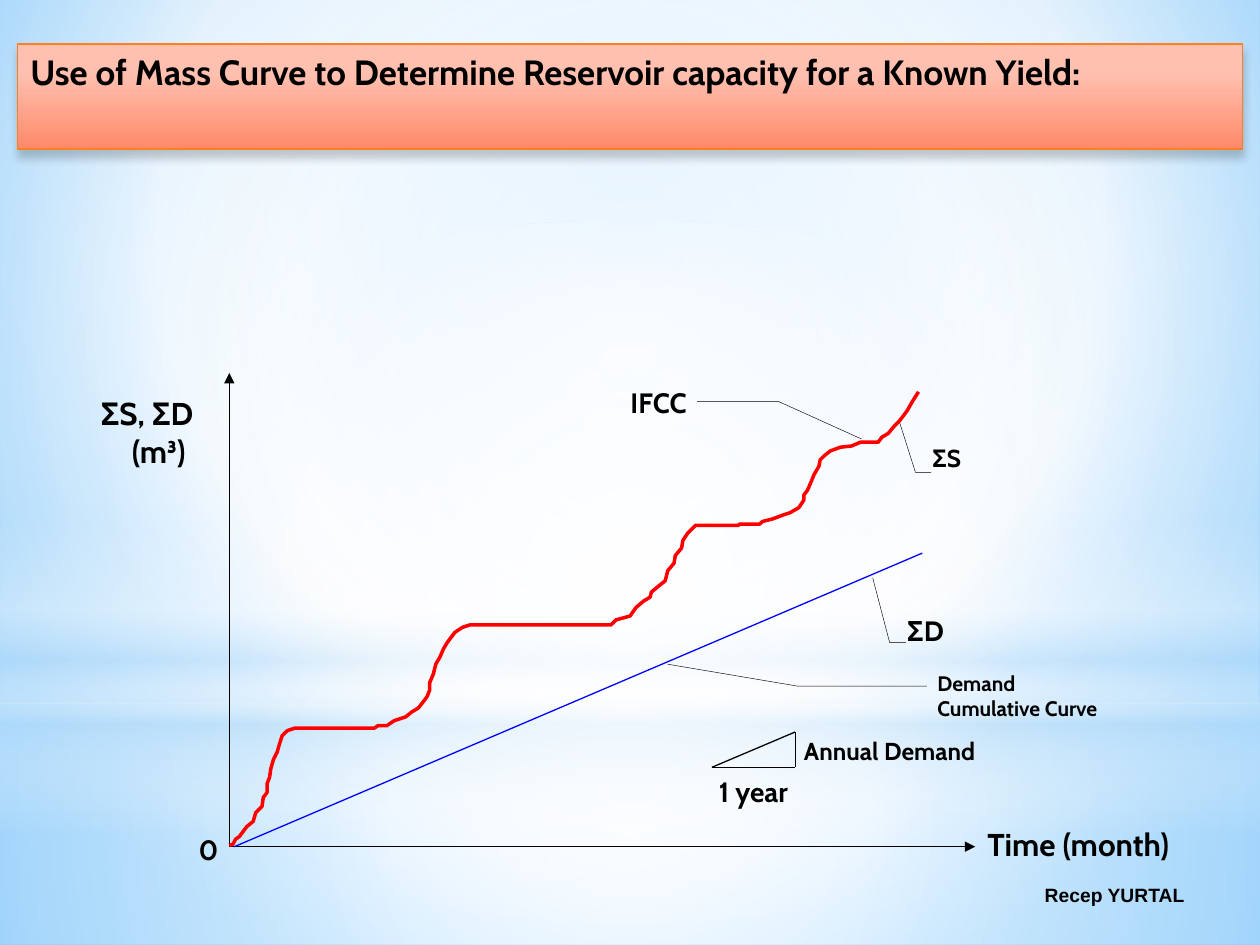
from lxml.etree import SubElement
from pptx import Presentation
from pptx.dml.color import RGBColor
from pptx.enum.shapes import MSO_CONNECTOR, MSO_SHAPE
from pptx.enum.text import MSO_ANCHOR, MSO_AUTO_SIZE, PP_ALIGN
from pptx.oxml import parse_xml
from pptx.oxml.ns import nsdecls, qn
from pptx.util import Inches, Pt

BLACK, RED, BLUE = "000000", "FF0000", "0000FF"
WHITE, SKY = "FFFFFF", "B4DCFA"
CENTRE = (50, 50, 50, 50)
ORIGIN_X, AXIS_Y = 1.82, 6.72

# Cumulative inflow curve: steep wet seasons joined by flat dry seasons
INFLOW = [
    (1.82, 6.71), (1.85, 6.7), (1.87, 6.66), (1.9, 6.64), (1.93, 6.6),
    (1.96, 6.56), (2.01, 6.52), (2.03, 6.45), (2.08, 6.4), (2.09, 6.33),
    (2.12, 6.29), (2.12, 6.22), (2.14, 6.17), (2.15, 6.1), (2.17, 6.03),
    (2.2, 5.97), (2.22, 5.9), (2.24, 5.84), (2.28, 5.8), (2.34, 5.78),
    (2.97, 5.78), (3, 5.76), (3.07, 5.76), (3.13, 5.72), (3.22, 5.69),
    (3.27, 5.65), (3.32, 5.62), (3.36, 5.57), (3.39, 5.53), (3.41, 5.48),
    (3.41, 5.42), (3.44, 5.35), (3.46, 5.27), (3.49, 5.22), (3.52, 5.15),
    (3.55, 5.1), (3.58, 5.06), (3.61, 5.02), (3.67, 4.98), (3.73, 4.96),
    (4.85, 4.96), (4.89, 4.92), (5, 4.89), (5.05, 4.82), (5.11, 4.77),
    (5.16, 4.74), (5.17, 4.7), (5.23, 4.65), (5.28, 4.61), (5.3, 4.53),
    (5.35, 4.47), (5.36, 4.41), (5.41, 4.35), (5.42, 4.29), (5.46, 4.23),
    (5.49, 4.2), (5.52, 4.17), (5.86, 4.17), (5.87, 4.16), (6.03, 4.16),
    (6.05, 4.14), (6.13, 4.12), (6.21, 4.09), (6.27, 4.07), (6.34, 4.03),
    (6.38, 3.97), (6.38, 3.93), (6.41, 3.89), (6.44, 3.82), (6.46, 3.77),
    (6.5, 3.7), (6.51, 3.65), (6.54, 3.62), (6.59, 3.58), (6.67, 3.55),
    (6.76, 3.54), (6.83, 3.51), (6.97, 3.51), (7, 3.47), (7.05, 3.44),
    (7.1, 3.38), (7.14, 3.34), (7.2, 3.26), (7.24, 3.19), (7.29, 3.11),
]


def rgb(hex_color):
    return RGBColor.from_string(hex_color)


def inches(*values):
    return [Inches(v) for v in values]


def set_gradient(fill, holder, stops, centre=None, angle=90):
    """Give a fill gradient stops of (position, colour[, opacity])."""
    fill.solid()
    grad = parse_xml(f'<a:gradFill {nsdecls("a")} rotWithShape="1"/>')
    gs_list = SubElement(grad, qn("a:gsLst"))
    for position, color, *opacity in stops:
        gs = SubElement(gs_list, qn("a:gs"), pos=str(position * 1000))
        clr = SubElement(gs, qn("a:srgbClr"), val=color)
        if opacity:
            SubElement(clr, qn("a:alpha"), val=str(opacity[0] * 1000))
    if centre:
        circle = SubElement(grad, qn("a:path"), path="circle")
        sides = {side: str(v * 1000) for side, v in zip("ltrb", centre)}
        SubElement(circle, qn("a:fillToRect"), **sides)
    else:
        SubElement(grad, qn("a:lin"), ang=str(angle * 60000), scaled="0")
    solid = holder.find(qn("a:solidFill"))
    holder.replace(solid, grad)


def add_glow(slide, kind, box, stops, centre=None):
    sp = slide.shapes.add_shape(kind, *inches(*box))
    sp.shadow.inherit = False
    sp.line.fill.background()
    set_gradient(sp.fill, sp._element.spPr, stops, centre)


def write_text(tf, text, size=16, font="Cabin", aligns=(PP_ALIGN.LEFT,), inset=None):
    """Write one paragraph per line of text, each with its own alignment."""
    tf.word_wrap = True
    if inset is not None:
        tf.margin_left = tf.margin_top = Inches(inset)
        tf.margin_right = tf.margin_bottom = Inches(inset)
    for i, (line, align) in enumerate(zip(text.split("\n"), aligns)):
        p = tf.add_paragraph() if i else tf.paragraphs[0]
        p.alignment = align
        r = p.add_run()
        r.text = line
        r.font.size, r.font.name, r.font.bold = Pt(size), font, True
        r.font.color.rgb = rgb(BLACK)


def add_label(slide, box, text, leader=None, **text_format):
    """Add a plain label, or a callout when leader adjustments are given."""
    kind = MSO_SHAPE.LINE_CALLOUT_2_NO_BORDER if leader else MSO_SHAPE.ROUNDED_RECTANGLE
    sp = slide.shapes.add_shape(kind, *inches(*box))
    sp.shadow.inherit = False
    sp.fill.background()
    if leader:
        for i, value in enumerate(leader):
            sp.adjustments[i] = value
        sp.line.color.rgb = rgb(BLACK)
        sp.line.width = Pt(0.25)
    else:
        sp.line.fill.background()
    sp.text_frame.vertical_anchor = MSO_ANCHOR.TOP
    write_text(sp.text_frame, text, **{"inset": 0.01, **text_format})


def add_line(slide, start, end, color=BLACK, width=0.25, arrow=False):
    line = slide.shapes.add_connector(MSO_CONNECTOR.STRAIGHT, *inches(*start, *end))
    line.line.color.rgb = rgb(color)
    line.line.width = Pt(width)
    if arrow:
        SubElement(line.line._get_or_add_ln(), qn("a:tailEnd"), type="triangle")
    SubElement(line._element.spPr, qn("a:effectLst"))


def add_curve(slide, points, color, width):
    start, *rest = [inches(*point) for point in points]
    builder = slide.shapes.build_freeform(*start)
    builder.add_line_segments(rest, close=False)
    sp = builder.convert_to_shape()
    sp.shadow.inherit = False
    sp.fill.background()
    sp.line.color.rgb = rgb(color)
    sp.line.width = Pt(width)


def add_background(slide):
    fill = slide.background.fill
    fill.solid()
    holder = slide._element.find(".//" + qn("p:bgPr"))
    set_gradient(fill, holder, [(0, "9ED5FF"), (60, WHITE), (100, "5BB9FF")], (20, 10, 20, 60))
    rect = MSO_SHAPE.RECTANGLE
    add_glow(slide, rect, (0, 5.58, 10, 1.92),
             [(0, WHITE, 91), (37, WHITE, 76), (100, SKY, 79)], CENTRE)
    add_glow(slide, rect, (0, 0, 10, 5.58),
             [(0, WHITE, 89), (48, WHITE, 62), (100, SKY, 79)], CENTRE)
    add_glow(slide, rect, (0, 4.12, 10, 2.5),
             [(0, WHITE, 0), (29, WHITE, 30), (45, SKY, 40),
              (55, WHITE, 26), (65, SKY, 60), (100, WHITE, 0)])
    add_glow(slide, MSO_SHAPE.OVAL, (0, 1.75, 10, 5.58),
             [(0, WHITE, 100), (56, WHITE, 0)], CENTRE)


def format_title(slide, text):
    sp = slide.shapes.title
    sp.left, sp.top, sp.width, sp.height = inches(0.14, 0.35, 9.72, 0.44)
    write_text(sp.text_frame, text, size=20)
    sp.text_frame.auto_size = MSO_AUTO_SIZE.SHAPE_TO_FIT_TEXT
    sp.text_frame.vertical_anchor = MSO_ANCHOR.TOP
    set_gradient(sp.fill, sp._element.spPr, [(28, "FFC0AF"), (100, "FF8968")])
    sp.line.color.rgb = rgb("FF8021")
    sp.line.width = Pt(0.75)
    effects = SubElement(sp._element.spPr, qn("a:effectLst"))
    shadow = SubElement(effects, qn("a:outerShdw"), blurRad=str(Pt(5)),
                        dist=str(Pt(4)), dir="5400000", rotWithShape="0")
    clr = SubElement(shadow, qn("a:srgbClr"), val=BLACK)
    SubElement(clr, qn("a:alpha"), val="20000")
    # Bring the title in front of the background shapes
    slide.shapes._spTree.append(sp._element)


def main():
    prs = Presentation()
    prs.slide_width, prs.slide_height = inches(10, 7.5)
    slide = prs.slides.add_slide(prs.slide_layouts[5])
    add_background(slide)

    # Author
    author = slide.shapes.add_textbox(*inches(6.75, 6.9, 2.75, 0.4))
    author.text_frame.vertical_anchor = MSO_ANCHOR.MIDDLE
    write_text(author.text_frame, "Recep YURTAL", size=11, font="Arial", aligns=(PP_ALIGN.RIGHT,))

    # Axes
    add_line(slide, (ORIGIN_X, AXIS_Y), (ORIGIN_X, 2.96), arrow=True)
    add_line(slide, (ORIGIN_X, AXIS_Y), (7.74, AXIS_Y), arrow=True)
    add_label(slide, (7.8, 6.51, 1.8, 0.55), "Time (month)", size=18)
    add_label(slide, (0.75, 3.08, 1.02, 0.82), "ΣS, ΣD\n(m³)", size=18,
              aligns=(PP_ALIGN.LEFT, PP_ALIGN.CENTER))
    add_label(slide, (1.47, 6.58, 0.37, 0.38), "0", aligns=(PP_ALIGN.CENTER,))

    # Inflow curve and demand line
    add_curve(slide, INFLOW, RED, 2)
    add_line(slide, (1.86, AXIS_Y), (7.32, 4.39), BLUE, 0.75)

    # Slope triangle of the annual demand
    add_line(slide, (5.65, 6.09), (6.31, 5.81), width=0.75)
    add_line(slide, (5.65, 6.09), (6.31, 6.09))
    add_line(slide, (6.31, 5.81), (6.31, 6.09))
    add_label(slide, (6.35, 5.81, 1.8, 0.44), "Annual Demand", size=14)
    add_label(slide, (5.68, 6.12, 0.78, 0.32), "1 year")

    # Callouts
    add_label(slide, (7.39, 3.51, 0.48, 0.48), "ΣS", size=14,
              leader=(0.5, 0, 0.5, -0.26, -0.32, -0.52))
    add_label(slide, (7.19, 4.86, 0.48, 0.48), "ΣD",
              leader=(0.5, 0, 0.5, -0.27, -0.57, -0.55))
    add_label(slide, (4.05, 3.06, 1.4, 0.35), "IFCC", inset=0, aligns=(PP_ALIGN.RIGHT,),
              leader=(0.36, 1.06, 0.36, 1.52, 1.21, 1.99))
    add_label(slide, (7.44, 5.32, 1.4, 0.35), "Demand Cumulative Curve", size=12, inset=0,
              leader=(0.36, -0.06, 0.36, -0.79, -0.14, -1.53))

    format_title(slide, "Use of Mass Curve to Determine Reservoir capacity for a Known Yield:")
    prs.save("out.pptx")


if __name__ == "__main__":
    main()
